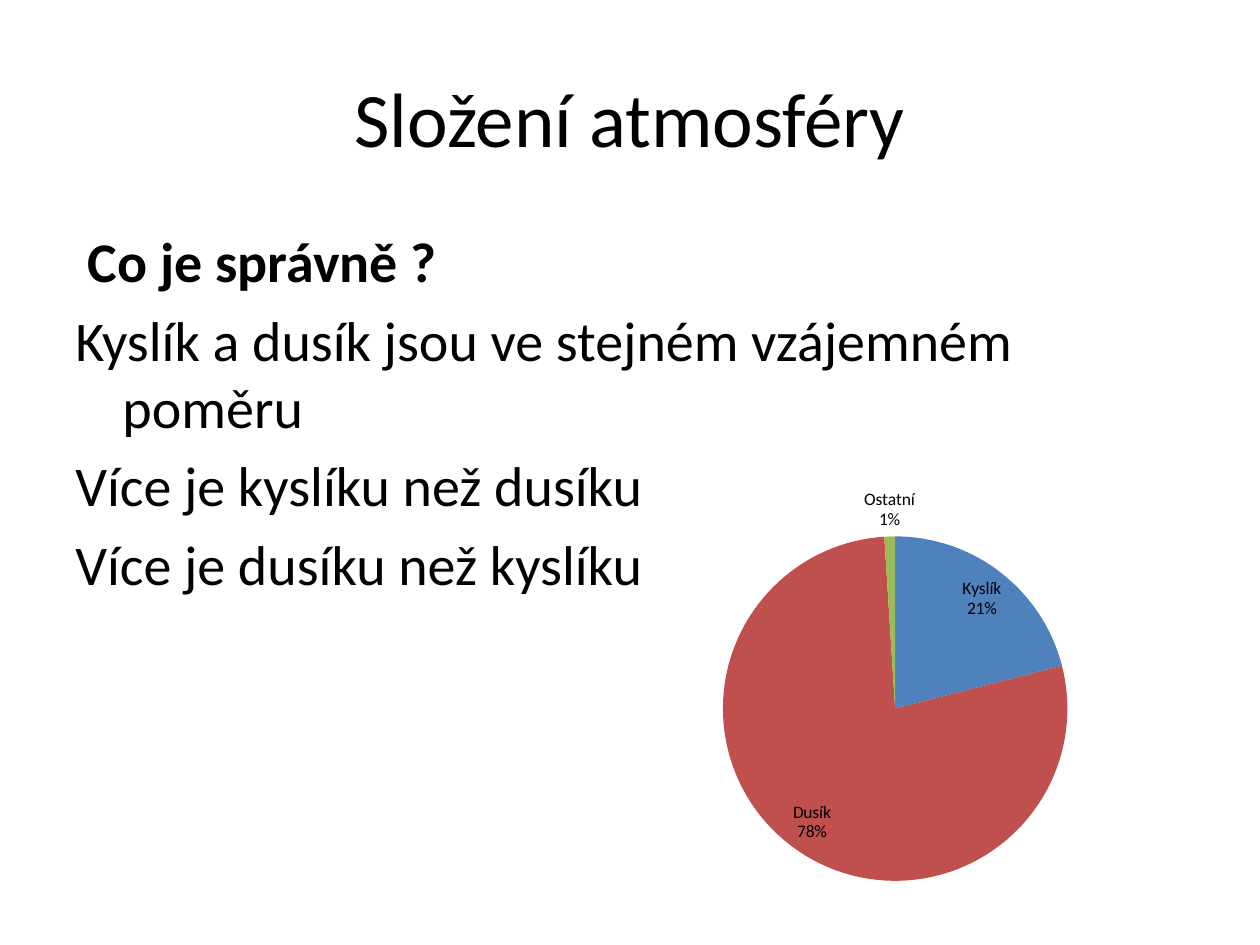
from lxml import etree
from pptx import Presentation
from pptx.chart.data import CategoryChartData
from pptx.dml.color import RGBColor
from pptx.enum.chart import XL_CHART_TYPE as ChartType, XL_LABEL_POSITION as LabelPos
from pptx.enum.text import MSO_ANCHOR, PP_ALIGN
from pptx.oxml import parse_xml
from pptx.oxml.ns import nsdecls, qn
from pptx.util import Cm, Pt

FONT = "Calibri"
COLORS = {"text": "000000", "Kyslík": "4F81BD", "Dusík": "C0504D", "Ostatní": "9BBB59"}
SHARES = {"Kyslík": 21, "Dusík": 78, "Ostatní": 1}
QUESTION = "Co je správně ?"
ANSWERS = [
    "Kyslík a dusík jsou ve stejném vzájemném poměru",
    "Více je kyslíku než dusíku",
    "Více je dusíku než kyslíku",
]


def style_font(font, size, bold=False):
    """Apply the slide's typeface and text colour."""
    font.name, font.size, font.bold = FONT, Pt(size), bold
    font.color.rgb = RGBColor.from_string(COLORS["text"])


def place_title(slide, text, left, top, width, height):
    """Fill and position the title placeholder."""
    title = slide.shapes.title
    title.left, title.top, title.width, title.height = left, top, width, height
    tf = title.text_frame
    tf.text = text
    tf.vertical_anchor = MSO_ANCHOR.MIDDLE
    p = tf.paragraphs[0]
    p.alignment = PP_ALIGN.CENTER
    style_font(p.runs[0].font, 44)


def add_quiz(slide, left, top, width, height):
    """Add the bold question and its answers with hanging indents."""
    tf = slide.shapes.add_textbox(left, top, width, height).text_frame
    tf.word_wrap = True
    tf.text = "\n".join([QUESTION, *ANSWERS])
    for i, p in enumerate(tf.paragraphs):
        pPr = p._p.get_or_add_pPr()
        pPr.set("marL", str(Cm(0.95)))
        pPr.set("indent", str(Cm(-0.95 if i else -0.7)))
        if i:
            p.space_before = Pt(6.4)
        style_font(p.runs[0].font, 32, bold=i == 0)


def set_plot_layout(chart, x, y, w, h):
    """Fix the inner plot area as fractions of the chart."""
    plot_area = chart._chartSpace.find(".//" + qn("c:plotArea"))
    for old in plot_area.findall(qn("c:layout")):
        plot_area.remove(old)
    layout = parse_xml(f"<c:layout {nsdecls('c')}><c:manualLayout/></c:layout>")
    settings = {"layoutTarget": "inner", "xMode": "edge", "yMode": "edge",
                "x": x, "y": y, "w": w, "h": h}
    for tag, value in settings.items():
        etree.SubElement(layout[0], qn(f"c:{tag}")).set("val", str(value))
    plot_area.insert(0, layout)


def add_pie(slide, left, top, width, height):
    """Add the pie chart of atmospheric shares."""
    data = CategoryChartData()
    data.categories = list(SHARES)
    data.add_series("Podíl", list(SHARES.values()))
    chart = slide.shapes.add_chart(ChartType.PIE, left, top, width, height, data).chart
    chart.has_title = chart.has_legend = False
    style_font(chart.font, 10)
    set_plot_layout(chart, 0.19, 0.23, 0.81, 0.77)
    plot = chart.plots[0]
    plot.vary_by_categories = True
    for i, name in enumerate(SHARES):
        fill = plot.series[0].points[i].format.fill
        fill.solid()
        fill.fore_color.rgb = RGBColor.from_string(COLORS[name])
    plot.has_data_labels = True
    labels = plot.data_labels
    labels.show_category_name = labels.show_percentage = True
    labels.show_value = False
    labels.number_format, labels.number_format_is_linked = "0%", False
    labels.position = LabelPos.BEST_FIT
    style_font(labels.font, 10)


def main():
    """Build and save the slide."""
    prs = Presentation()
    prs.slide_width, prs.slide_height = Cm(25.4), Cm(19.05)
    slide = prs.slides.add_slide(prs.slide_layouts[5])
    place_title(slide, "Složení atmosféry", Cm(1.27), Cm(0.76), Cm(22.86), Cm(3.18))
    add_quiz(slide, Cm(1.27), Cm(4.45), Cm(22.86), Cm(12.57))
    add_pie(slide, Cm(9.3), Cm(8.74), Cm(14.7), Cm(9.02))
    prs.save("out.pptx")


if __name__ == "__main__":
    main()
